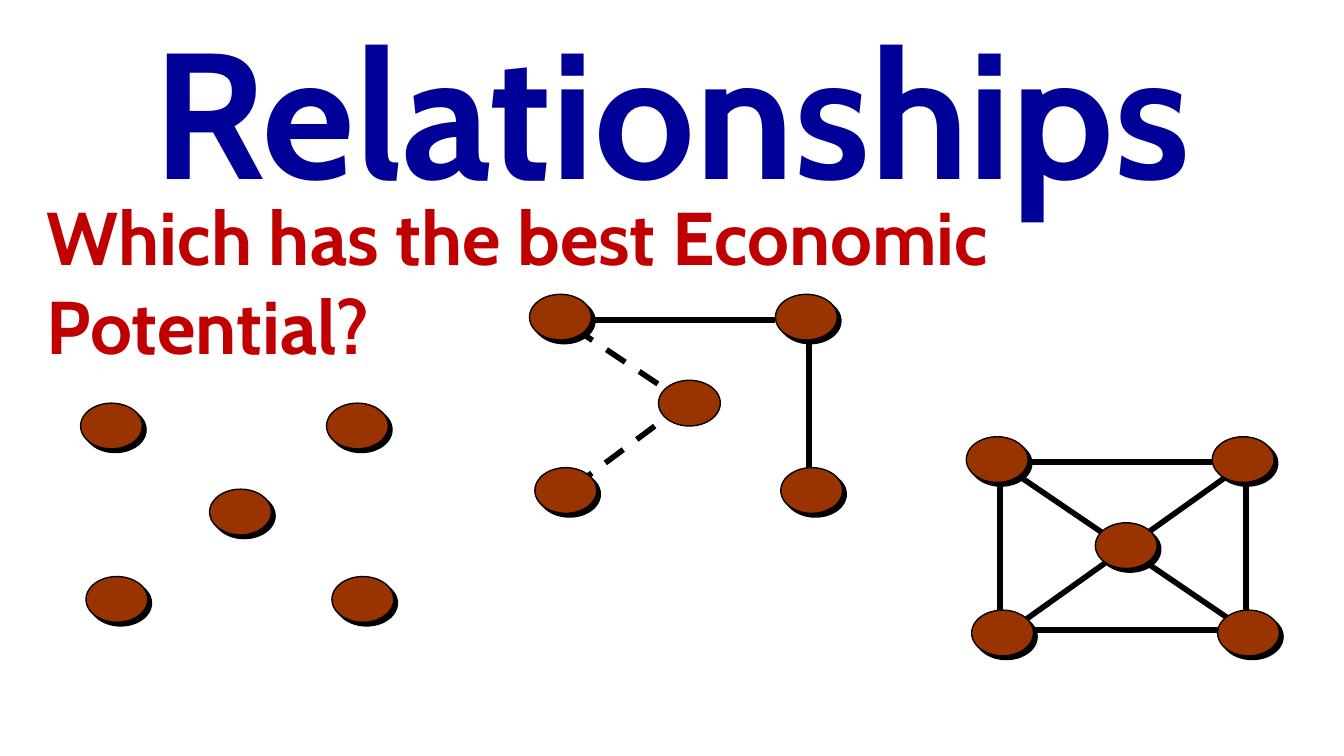
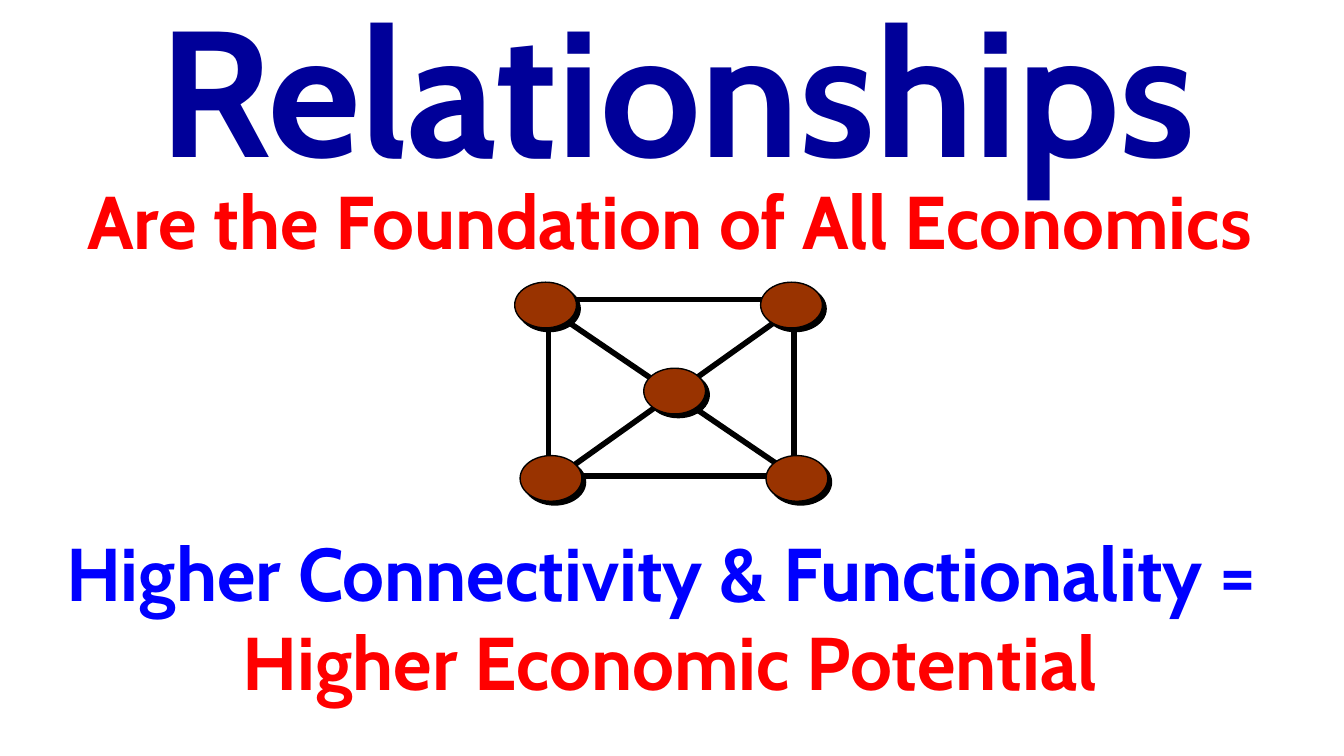
from lxml import etree
from pptx import Presentation
from pptx import util as u
from pptx.dml.color import RGBColor
from pptx.enum import dml, shapes, text
from pptx.oxml import ns

PX = 9144  # EMU per px, 100 px to the inch
FONT = "Cabin"
COLORS = {
    "navy": "000099",
    "crimson": "C00000",
    "red": "FF0000",
    "blue": "0000FF",
    "node": "993300",
    "black": "000000",
}
NODE_SIZE = (46, 34)
CENTER = (96, 64)
NODES = [(0, 0), (183, 0), (4, 129), (187, 129), CENTER]

# Links run from x1, y1 to x2, y2, measured from the network's top left corner
RIGHT_SIDE = (208, 131, 208, 31, False)
MESH = [
    (33, 144, 200, 25, False),
    (33, 25, 208, 144, False),
    RIGHT_SIDE,
    (50, 144, 191, 144, False),
    (25, 131, 25, 31, False),
]
HIGH_TOP_SIDE = (42, 13, 184, 13, False)
LOW_TOP_SIDE = (41, 19, 183, 19, False)
PARTIAL = [
    (33, 143, 108, 87, True),
    (33, 25, 108, 75, True),
    LOW_TOP_SIDE,
    RIGHT_SIDE,
]


def add_run(paragraph, words, size, color):
    run = paragraph.add_run()
    run.text = words
    run.font.name = FONT
    run.font.size = u.Pt(size)
    run.font.bold = True
    run.font.color.rgb = RGBColor.from_string(COLORS[color])


def add_network(slide, left, top, links, flat_center=False):
    group = slide.shapes.add_group_shape()
    for x1, y1, x2, y2, dashed in links:
        link = group.shapes.add_connector(
            shapes.MSO_CONNECTOR.STRAIGHT,
            (left + x1) * PX, (top + y1) * PX, (left + x2) * PX, (top + y2) * PX)
        link.line.color.rgb = RGBColor.from_string(COLORS["black"])
        link.line.width = u.Pt(3)
        if dashed:
            link.line.dash_style = dml.MSO_LINE.DASH
        etree.SubElement(link._element.spPr, ns.qn("a:effectLst"))

    for x, y in NODES:
        node = group.shapes.add_shape(
            shapes.MSO_SHAPE.OVAL, (left + x) * PX, (top + y) * PX,
            *(side * PX for side in NODE_SIZE))
        node.fill.solid()
        node.fill.fore_color.rgb = RGBColor.from_string(COLORS["node"])
        node.line.color.rgb = RGBColor.from_string(COLORS["black"])
        node.line.width = u.Pt(0.75)
        node.shadow.inherit = False
        if flat_center and (x, y) == CENTER:
            continue
        effects = node._element.spPr.find(ns.qn("a:effectLst"))
        shadow = etree.SubElement(
            effects, ns.qn("a:outerShdw"), dist=str(u.Pt(2.8)), dir="2700000",
            algn="ctr", rotWithShape="0")
        etree.SubElement(shadow, ns.qn("a:srgbClr"), val=COLORS["black"])


# Widescreen, 16 to 9
presentation = Presentation()
presentation.slide_width = 1000 * PX
presentation.slide_height = presentation.slide_width * 9 // 16

# Each slide: title position, networks, text boxes (box, alignment, lines)
LEFT, MIDDLE = text.PP_ALIGN.LEFT, text.PP_ALIGN.CENTER
SLIDES = [
    (
        (50, 12),
        [
            (60, 300, []),
            (394, 219, PARTIAL, True),
            (719, 325, MESH + [LOW_TOP_SIDE]),
        ],
        [((25, 137, 967, 77), LEFT,
          [("Which has the best Economic Potential?", "crimson")])],
    ),
    (
        (54, -4),
        [(383, 210, MESH + [HIGH_TOP_SIDE])],
        [
            ((55, 125, 902, 77), LEFT,
             [("Are the Foundation of All Economics", "red")]),
            ((22, 387, 953, 145), MIDDLE,
             [("Higher Connectivity & Functionality = ", "blue"),
              ("Higher Economic Potential", "red")]),
        ],
    ),
]

for (title_left, title_top), networks, boxes in SLIDES:
    slide = presentation.slides.add_slide(presentation.slide_layouts[5])

    # Title
    title = slide.shapes.title
    title.left, title.top = title_left * PX, title_top * PX
    title.width, title.height = 900 * PX, 136 * PX
    title.text_frame.auto_size = text.MSO_AUTO_SIZE.NONE
    title.text_frame.vertical_anchor = text.MSO_ANCHOR.MIDDLE
    paragraph = title.text_frame.paragraphs[0]
    paragraph.alignment = MIDDLE
    add_run(paragraph, "Relationships", 96, "navy")

    # Networks
    for network in networks:
        add_network(slide, *network)

    # Statements
    for box, alignment, lines in boxes:
        frame = slide.shapes.add_textbox(*(value * PX for value in box)).text_frame
        frame.word_wrap = True
        frame.auto_size = text.MSO_AUTO_SIZE.SHAPE_TO_FIT_TEXT
        for index, (words, color) in enumerate(lines):
            paragraph = frame.add_paragraph() if index else frame.paragraphs[0]
            paragraph.alignment = alignment
            add_run(paragraph, words, 40, color)

presentation.save("out.pptx")
